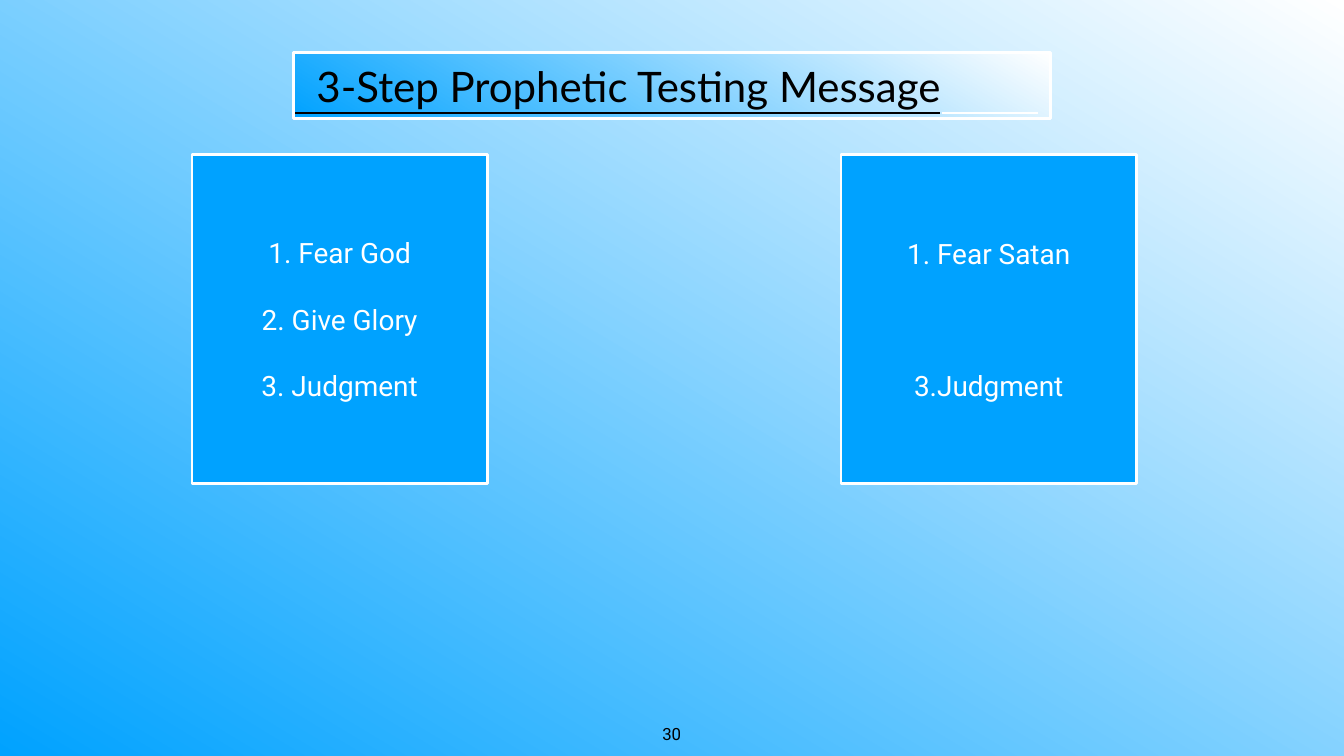
from lxml import etree
from pptx import Presentation
from pptx import util as u
from pptx.dml.color import RGBColor
from pptx.enum import shapes, text
from pptx.oxml.ns import qn

WHITE, BLUE, BLACK = "FFFFFF", "00A2FF", "000000"
TITLE = "3-Step Prophetic Testing Message"
PAGE_NUMBER = "30"
LINE_HEIGHT = 47
BOXES = [
    (3.81, [("1. Fear God", 0), ("2. Give Glory", 1), ("3. Judgment", 1)]),
    (16.69, [("1. Fear Satan", 0), ("3.Judgment", 3)]),
]
UNDERLINE_ENDS = [(5.86, 6.31, BLACK), (18.69, 20.6, WHITE)]


def color(value):
    return RGBColor.from_string(value)


def place(shape, left, top, width, height):
    shape.left, shape.top = u.Inches(left), u.Inches(top)
    shape.width, shape.height = u.Inches(width), u.Inches(height)


def fill_gradient(fill):
    fill.gradient()
    fill.gradient_angle = 360 - 121
    for stop, value in zip(fill.gradient_stops, (WHITE, BLUE)):
        stop.color.rgb = color(value)


def outline(shape):
    shape.line.color.rgb = color(WHITE)
    shape.line.width = u.Pt(4)


def format_frame(frame, inset, wrap=True):
    frame.word_wrap = wrap
    frame.auto_size = text.MSO_AUTO_SIZE.NONE
    frame.vertical_anchor = text.MSO_ANCHOR.MIDDLE
    frame.margin_left = frame.margin_right = u.Inches(inset)
    frame.margin_top = frame.margin_bottom = u.Inches(inset)


def format_paragraph(paragraph, name, size, value, align=text.PP_ALIGN.CENTER):
    paragraph.alignment = align
    paragraph.font.name = name
    paragraph.font.size = u.Pt(size)
    paragraph.font.color.rgb = color(value)


def add_page_number(slide):
    box = slide.shapes.add_textbox(0, 0, 0, 0)
    place(box, 13.08, 14.31, 0.5, 0.5)
    format_frame(box.text_frame, 0.06, wrap=False)
    box.text_frame.text = PAGE_NUMBER
    format_paragraph(box.text_frame.paragraphs[0], "Roboto", 24, BLACK)


def add_step_box(slide, left, steps):
    box = slide.shapes.add_shape(shapes.MSO_SHAPE.RECTANGLE, 0, 0, 0, 0)
    place(box, left, 3.06, 5.86, 6.54)
    box.shadow.inherit = False
    box.fill.solid()
    box.fill.fore_color.rgb = color(BLUE)
    outline(box)
    frame = box.text_frame
    format_frame(frame, 0)
    for index, (step, gap_lines) in enumerate(steps):
        paragraph = frame.add_paragraph() if index else frame.paragraphs[0]
        paragraph.text = step
        paragraph.space_before = u.Pt(gap_lines * LINE_HEIGHT)
        format_paragraph(paragraph, "Roboto", 40, WHITE)


def format_title(slide):
    title = slide.shapes.title
    place(title, 5.83, 1.04, 15.02, 1.31)
    fill_gradient(title.fill)
    outline(title)
    frame = title.text_frame
    format_frame(frame, 0.06)
    frame.margin_left = u.Inches(0.45)
    frame.text = TITLE
    paragraph = frame.paragraphs[0]
    format_paragraph(paragraph, "Lato", 60, BLACK, text.PP_ALIGN.LEFT)
    paragraph.font.underline = True


def add_underline_end(slide, start, end, value):
    y = u.Inches(2.24)
    line = slide.shapes.add_connector(
        shapes.MSO_CONNECTOR.STRAIGHT, u.Inches(start), y, u.Inches(end), y)
    line.line.color.rgb = color(value)
    line.line.width = u.Pt(3)
    etree.SubElement(line._element.spPr, qn("a:effectLst"))


def main():
    presentation = Presentation()
    presentation.slide_width = u.Inches(26.67)
    presentation.slide_height = u.Inches(15)
    slide = presentation.slides.add_slide(presentation.slide_layouts[5])
    fill_gradient(slide.background.fill)
    add_page_number(slide)
    for left, steps in BOXES:
        add_step_box(slide, left, steps)
    format_title(slide)
    for start, end, value in UNDERLINE_ENDS:
        add_underline_end(slide, start, end, value)
    presentation.save("out.pptx")


if __name__ == "__main__":
    main()
